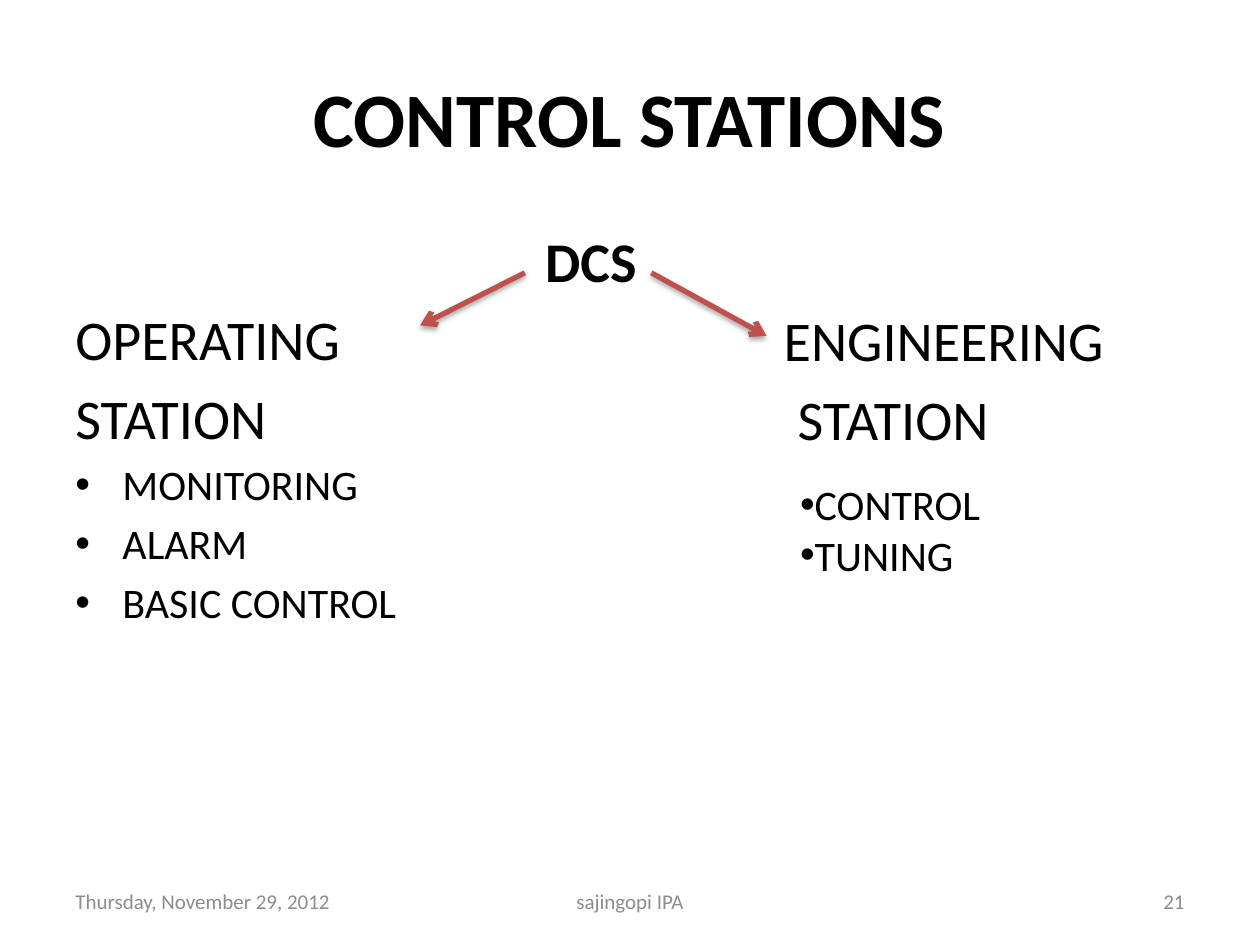
"""Build the control stations slide: a DCS split into two kinds of station."""
from lxml import etree
from pptx import Presentation
from pptx import util as u
from pptx.dml.color import RGBColor
from pptx.enum import shapes, text
from pptx.oxml.ns import qn

COLOURS = {"ink": "000000", "footer": "8C8C8C", "arrow": "C0504D", "shadow": "000000"}
FONT = "Calibri"
LEFT, CENTRE, RIGHT = text.PP_ALIGN.LEFT, text.PP_ALIGN.CENTER, text.PP_ALIGN.RIGHT
TOP, MIDDLE = text.MSO_ANCHOR.TOP, text.MSO_ANCHOR.MIDDLE


def add_box(slide, left, top, width, height, anchor=TOP):
    """Add a wrapping text box, placed in centimetres, and return its frame."""
    frame = slide.shapes.add_textbox(*map(u.Cm, (left, top, width, height))).text_frame
    frame.word_wrap = True
    frame.vertical_anchor = anchor
    return frame


def write(frame, words, size=32, colour="ink", bold=False, align=LEFT,
          before=0, margin=0, hanging=0, bullet=None):
    """Write one formatted paragraph, filling the empty first one if there is one."""
    first = frame.paragraphs[0]
    para = frame.add_paragraph() if first.runs else first
    run = para.add_run()
    run.text = words
    props = para._p.get_or_add_pPr()
    props.set("marL", str(u.Cm(margin)))
    props.set("indent", str(-u.Cm(hanging)))
    para.alignment = align
    para.space_before = u.Pt(before)
    if bullet:
        etree.SubElement(props, qn("a:buFont"), typeface="Arial")
        etree.SubElement(props, qn("a:buChar"), char=bullet)
    run.font.name = FONT
    run.font.size = u.Pt(size)
    run.font.bold = bold
    run.font.color.rgb = RGBColor.from_string(COLOURS[colour])


def add_arrow(slide, start, end):
    """Draw a branch arrow with a soft shadow between two points in centimetres."""
    branch = slide.shapes.add_connector(
        shapes.MSO_CONNECTOR.STRAIGHT, *map(u.Cm, (*start, *end)))
    branch.line.width = u.Pt(3)
    branch.line.color.rgb = RGBColor.from_string(COLOURS["arrow"])
    etree.SubElement(branch.line._get_or_add_ln(), qn("a:tailEnd"), type="arrow")
    effects = etree.SubElement(branch._element.spPr, qn("a:effectLst"))
    shadow = etree.SubElement(
        effects, qn("a:outerShdw"), blurRad=str(u.Pt(3.1)), dist=str(u.Pt(1.8)),
        dir="5400000", rotWithShape="0")
    tint = etree.SubElement(shadow, qn("a:srgbClr"), val=COLOURS["shadow"])
    etree.SubElement(tint, qn("a:alpha"), val="35000")


def add_stations(slide):
    """Write the DCS heading, both station names and their duties."""
    operating = add_box(slide, 1.27, 4.44, 14, 12.57)
    write(operating, "DCS", bold=True, margin=9.47)
    write(operating, "OPERATING", before=6.4)
    write(operating, "STATION", before=6.4)
    for duty in ("MONITORING", "ALARM", "BASIC CONTROL"):
        write(operating, duty, size=24, before=4.8, margin=0.95, hanging=0.95, bullet="•")

    engineering = add_box(slide, 15.55, 6.04, 8.58, 3.3)
    write(engineering, "ENGINEERING")
    write(engineering, "STATION", before=6.4, margin=0.28)

    duties = add_box(slide, 15.88, 9.53, 8.26, 2.31)
    for duty in ("CONTROL", "TUNING"):
        write(duties, duty, size=24, bullet="•")


def add_footer(slide):
    """Write the date, author and slide number along the bottom."""
    for words, left, width, align in (
            ("Thursday, November 29, 2012", 1.27, 5.93, LEFT),
            ("sajingopi IPA", 8.68, 8.04, CENTRE),
            ("21", 18.2, 5.93, RIGHT)):
        note = add_box(slide, left, 17.66, width, 1.02, MIDDLE)
        write(note, words, size=12, colour="footer", align=align)


def main():
    """Assemble and save the slide."""
    deck = Presentation()
    deck.slide_width, deck.slide_height = u.Cm(25.4), u.Cm(19.05)
    slide = deck.slides.add_slide(deck.slide_layouts[6])
    title = add_box(slide, 1.27, 0.76, 22.86, 3.18, MIDDLE)
    write(title, "CONTROL STATIONS", size=44, bold=True, align=CENTRE)
    add_stations(slide)
    add_arrow(slide, (13.13, 5.5), (15.45, 6.77))
    add_arrow(slide, (10.58, 5.5), (8.47, 6.56))
    add_footer(slide)
    deck.save("out.pptx")


if __name__ == "__main__":
    main()
